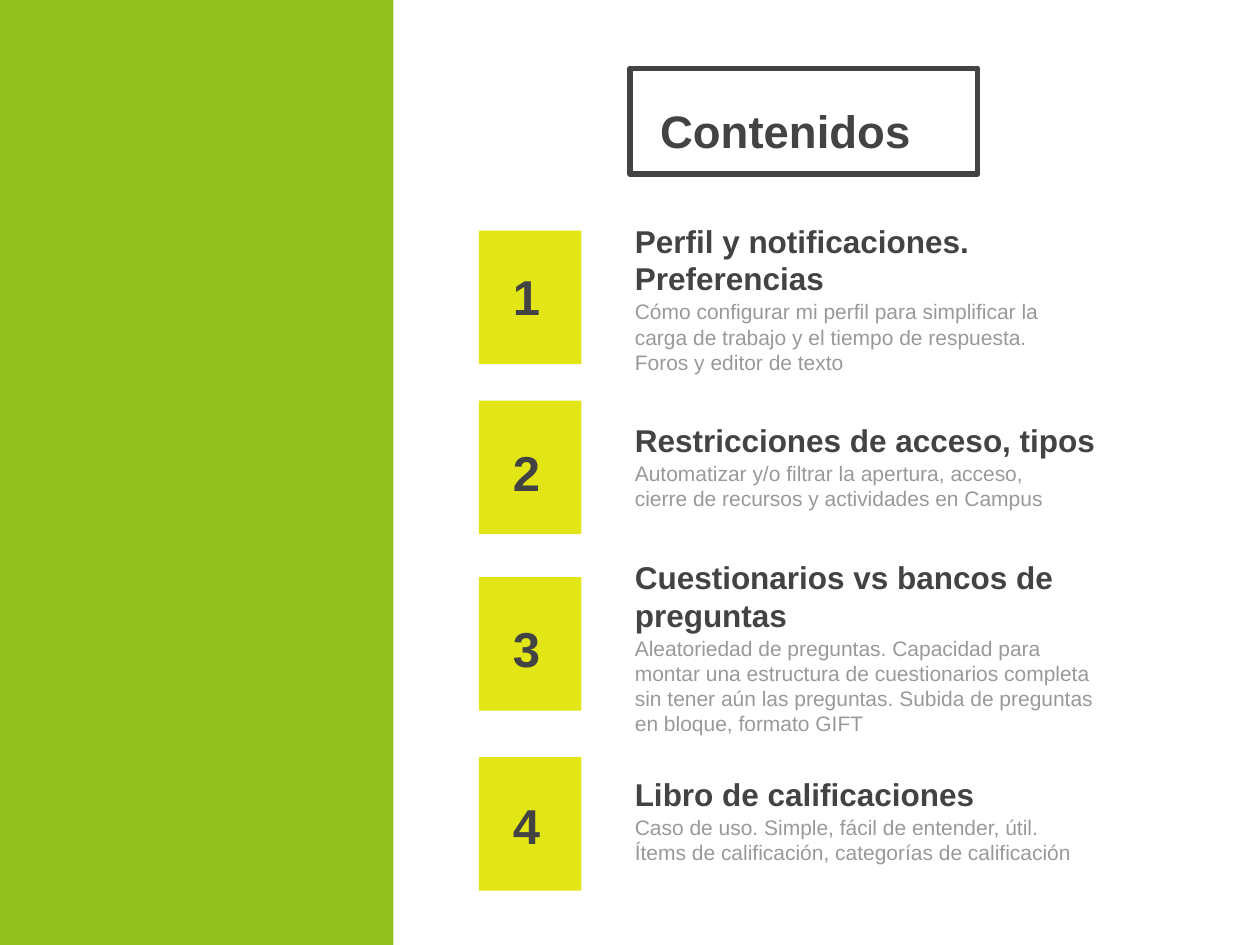
from pptx import Presentation
from pptx.dml.color import RGBColor
from pptx.enum.shapes import MSO_SHAPE
from pptx.enum.text import MSO_ANCHOR, MSO_AUTO_SIZE, PP_ALIGN
from pptx.util import Pt

COLORS = {
    "green": "93C01F",
    "lime": "E2E616",
    "dark": "434343",
    "gray": "999999",
}

TOPICS = [
    (131.8, 105.1, 307.5, 265, "Perfil y notificaciones. Preferencias",
     "Cómo configurar mi perfil para simplificar la carga de trabajo "
     "y el tiempo de respuesta. Foros y editor de texto"),
    (229, 197.3, 418, 265, "Restricciones de acceso, tipos",
     "Automatizar y/o filtrar la apertura, acceso, "
     "cierre de recursos y actividades en Campus"),
    (329.8, 297.4, 337, 279.4, "Cuestionarios vs bancos de preguntas",
     "Aleatoriedad de preguntas. Capacidad para montar una estructura de "
     "cuestionarios completa sin tener aún las preguntas. "
     "Subida de preguntas en bloque, formato GIFT"),
    (432.7, 399.6, 418, 265, "Libro de calificaciones",
     "Caso de uso. Simple, fácil de entender, útil. "
     "Ítems de calificación, categorías de calificación"),
]
NUMBER_TOP, NUMBER_STEP = 135.4, 100.8
TEXT_LEFT, DESCRIPTION_OFFSET = 355.7, 58.5


class SlideBuilder:
    font = "Arial"
    inset = 7.2

    def __init__(self, slide):
        self.slide = slide

    def color(self, name):
        return RGBColor.from_string(COLORS[name])

    def rectangle(self, left, top, width, height, fill=None, line=None):
        rectangle = self.slide.shapes.add_shape(
            MSO_SHAPE.RECTANGLE, Pt(left), Pt(top), Pt(width), Pt(height))
        rectangle.shadow.inherit = False
        if fill:
            rectangle.fill.solid()
            rectangle.fill.fore_color.rgb = self.color(fill)
        else:
            rectangle.fill.background()
        if line:
            rectangle.line.color.rgb = self.color(line)
            rectangle.line.width = Pt(3)
        else:
            rectangle.line.fill.background()

    def set_text(self, holder, text, size, color, bold, anchor, align):
        frame = holder.text_frame
        frame.text = text
        frame.word_wrap = True
        frame.auto_size = MSO_AUTO_SIZE.NONE
        frame.vertical_anchor = anchor
        frame.margin_left = frame.margin_right = Pt(self.inset)
        frame.margin_top = frame.margin_bottom = Pt(self.inset)
        paragraph = frame.paragraphs[0]
        paragraph.alignment = align
        font = paragraph.runs[0].font
        font.name = self.font
        font.size = Pt(size)
        font.bold = bold
        font.color.rgb = self.color(color)

    def title(self, text, left, top, width, height):
        title = self.slide.shapes.title
        title.left, title.top = Pt(left), Pt(top)
        title.width, title.height = Pt(width), Pt(height)
        self.set_text(title, text, 26, "dark", True, MSO_ANCHOR.MIDDLE, PP_ALIGN.LEFT)
        title.text_frame.paragraphs[0].line_spacing = 1.15

    def text(self, text, left, top, width, height, size, color="dark",
             bold=True, anchor=MSO_ANCHOR.TOP, align=PP_ALIGN.LEFT):
        box = self.slide.shapes.add_textbox(
            Pt(left), Pt(top), Pt(width), Pt(height))
        self.set_text(box, text, size, color, bold, anchor, align)


def main():
    deck = Presentation()
    deck.slide_width, deck.slide_height = Pt(720), Pt(540)
    builder = SlideBuilder(deck.slides.add_slide(deck.slide_layouts[5]))

    builder.rectangle(0, 0, 224.8, 540, fill="green")
    builder.rectangle(360, 39, 198.7, 60.5, line="dark")
    builder.title("Contenidos", 370, 13.7, 418, 116.6)

    for index, topic in enumerate(TOPICS):
        tile_top, heading_top, heading_width, description_width, heading, description = topic
        builder.rectangle(273.7, tile_top, 58.6, 76.3, fill="lime")
        builder.text(str(index + 1), 251.2, NUMBER_TOP + index * NUMBER_STEP,
                     99.4, 67, 28, anchor=MSO_ANCHOR.MIDDLE, align=PP_ALIGN.CENTER)
        builder.text(heading, TEXT_LEFT, heading_top, heading_width, 72, 18,
                     anchor=MSO_ANCHOR.BOTTOM)
        builder.text(description, TEXT_LEFT, heading_top + DESCRIPTION_OFFSET,
                     description_width, 60.5, 12, color="gray", bold=False)

    deck.save("out.pptx")


if __name__ == "__main__":
    main()
